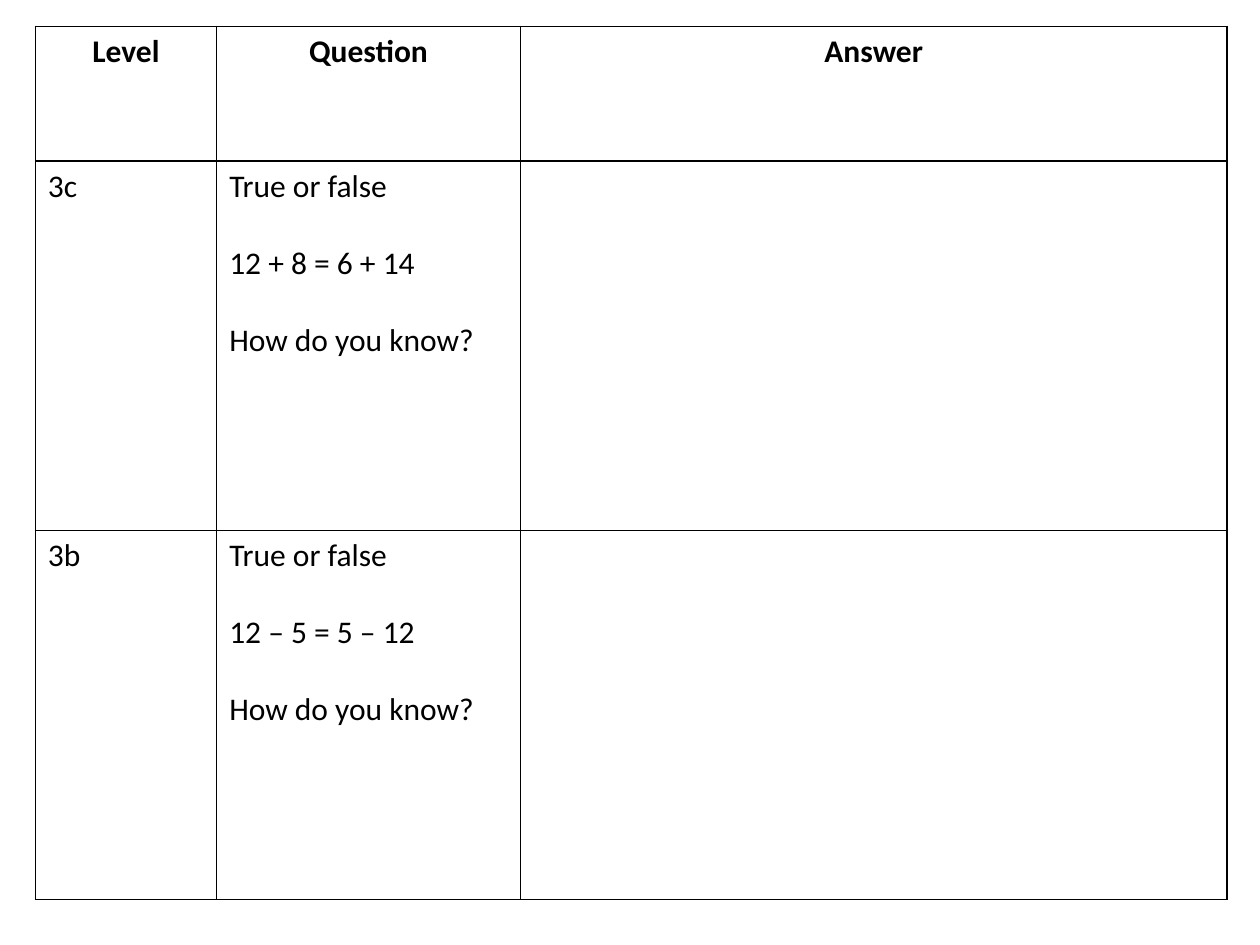
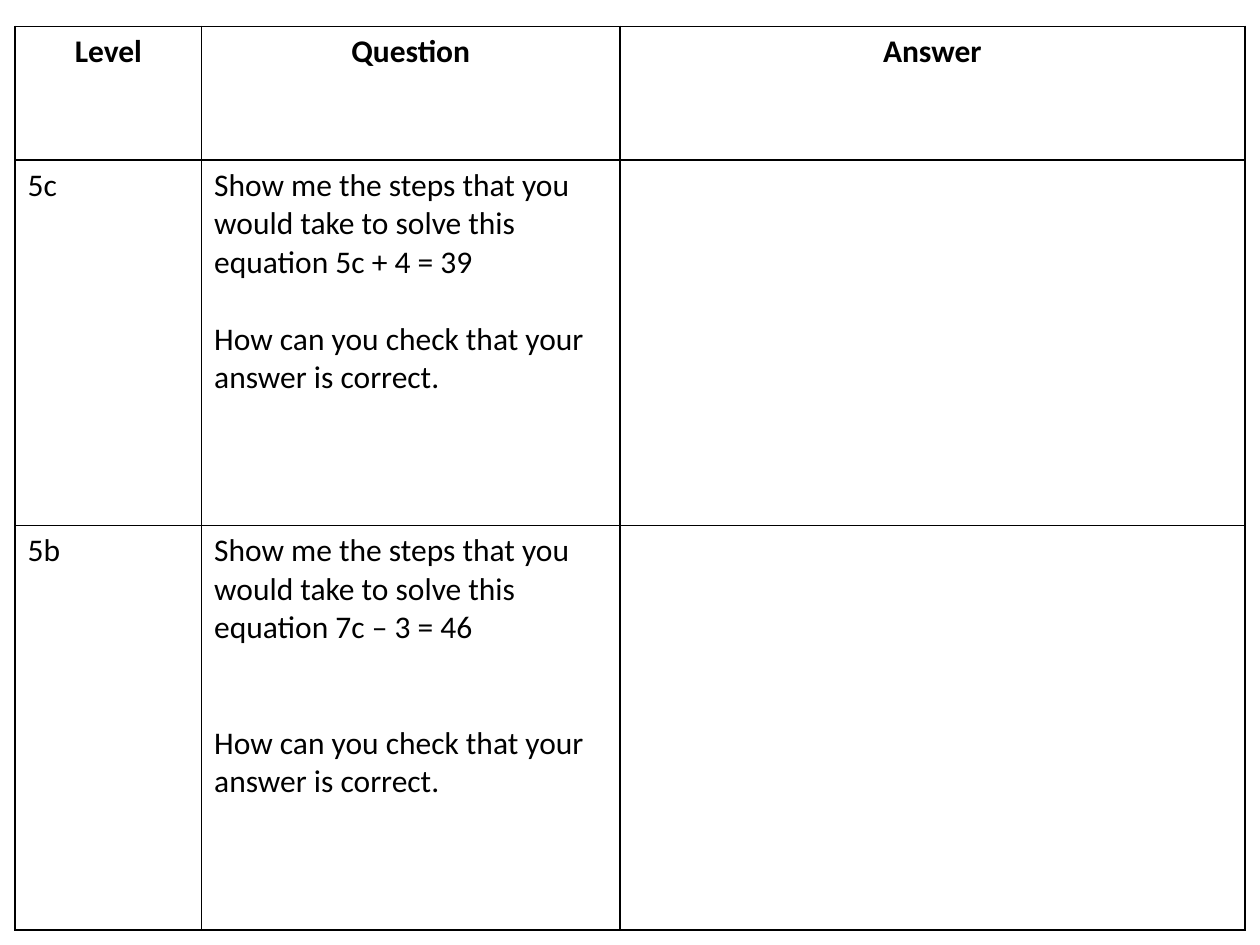
from lxml.etree import SubElement
from pptx import Presentation
from pptx.dml.color import RGBColor
from pptx.enum.text import PP_ALIGN
from pptx.oxml.ns import qn
from pptx.util import Inches, Pt

BLACK = RGBColor(0, 0, 0)
FONT = "Calibri"
TEXT_SIZE = Pt(18)
BLANK_LINE = Pt(22)
BORDER_WIDTH = Pt(1)
SLIDE_WIDTH = Inches(10)
SLIDE_HEIGHT = Inches(7.5)
HEADINGS = ("Level", "Question", "Answer")

TRUE_OR_FALSE = "True or false"
HOW_KNOW = "How do you know?"
SHOW_STEPS = "Show me the steps that you would take to solve this equation "
HOW_CHECK = "How can you check that your answer is correct."

WORKSHEETS = [
    {
        "box": (0.028, 0.028, 0.946, 0.924),
        "column_shares": (1.44, 2.41, 5.61),
        "row_shares": (1.07, 2.93, 2.93),
        "questions": [
            ("3c", (TRUE_OR_FALSE, "12 + 8 = 6 + 14", HOW_KNOW), 1),
            ("3b", (TRUE_OR_FALSE, "12 – 5 = 5 – 12", HOW_KNOW), 1),
        ],
    },
    {
        "box": (0.012, 0.028, 0.976, 0.956),
        "column_shares": (1.48, 3.32, 4.96),
        "row_shares": (1.06, 2.9, 3.21),
        "questions": [
            ("5c", (SHOW_STEPS + "5c + 4 = 39", HOW_CHECK), 1),
            ("5b", (SHOW_STEPS + "7c – 3 = 46", HOW_CHECK), 2),
        ],
    },
]


def write_text(text_frame, *lines, bold=False, align=PP_ALIGN.LEFT, blank_lines=0):
    for index, line in enumerate(lines):
        paragraph = text_frame.add_paragraph() if index else text_frame.paragraphs[0]
        paragraph.alignment = align
        if index:
            paragraph.space_before = BLANK_LINE * blank_lines
        run = paragraph.add_run()
        run.text = line
        run.font.name = FONT
        run.font.size = TEXT_SIZE
        run.font.bold = bold
        run.font.color.rgb = BLACK


def style_cell(cell):
    properties = cell._tc.get_or_add_tcPr()
    for side in ("a:lnL", "a:lnR", "a:lnT", "a:lnB"):
        line = SubElement(properties, qn(side), w=str(BORDER_WIDTH))
        fill = SubElement(line, qn("a:solidFill"))
        SubElement(fill, qn("a:srgbClr"), val=str(BLACK))
    cell.fill.background()


def share_out(items, shares, total, dimension):
    for item, share in zip(items, shares):
        setattr(item, dimension, int(total * share / sum(shares)))


def add_worksheet(slide, box, column_shares, row_shares, questions):
    left, width = (int(SLIDE_WIDTH * share) for share in box[::2])
    top, height = (int(SLIDE_HEIGHT * share) for share in box[1::2])
    table = slide.shapes.add_table(
        len(row_shares), len(column_shares), left, top, width, height
    ).table
    table.first_row = False
    table.horz_banding = False
    share_out(table.columns, column_shares, width, "width")
    share_out(table.rows, row_shares, height, "height")
    for cell in table.iter_cells():
        style_cell(cell)
    for column, heading in enumerate(HEADINGS):
        write_text(table.cell(0, column).text_frame, heading,
                   bold=True, align=PP_ALIGN.CENTER)
    for row, (level, lines, blank_lines) in enumerate(questions, start=1):
        write_text(table.cell(row, 0).text_frame, level)
        write_text(table.cell(row, 1).text_frame, *lines, blank_lines=blank_lines)


def main():
    presentation = Presentation()
    presentation.slide_width = SLIDE_WIDTH
    presentation.slide_height = SLIDE_HEIGHT
    for worksheet in WORKSHEETS:
        slide = presentation.slides.add_slide(presentation.slide_layouts[6])
        add_worksheet(slide, **worksheet)
    presentation.save("out.pptx")


if __name__ == "__main__":
    main()
